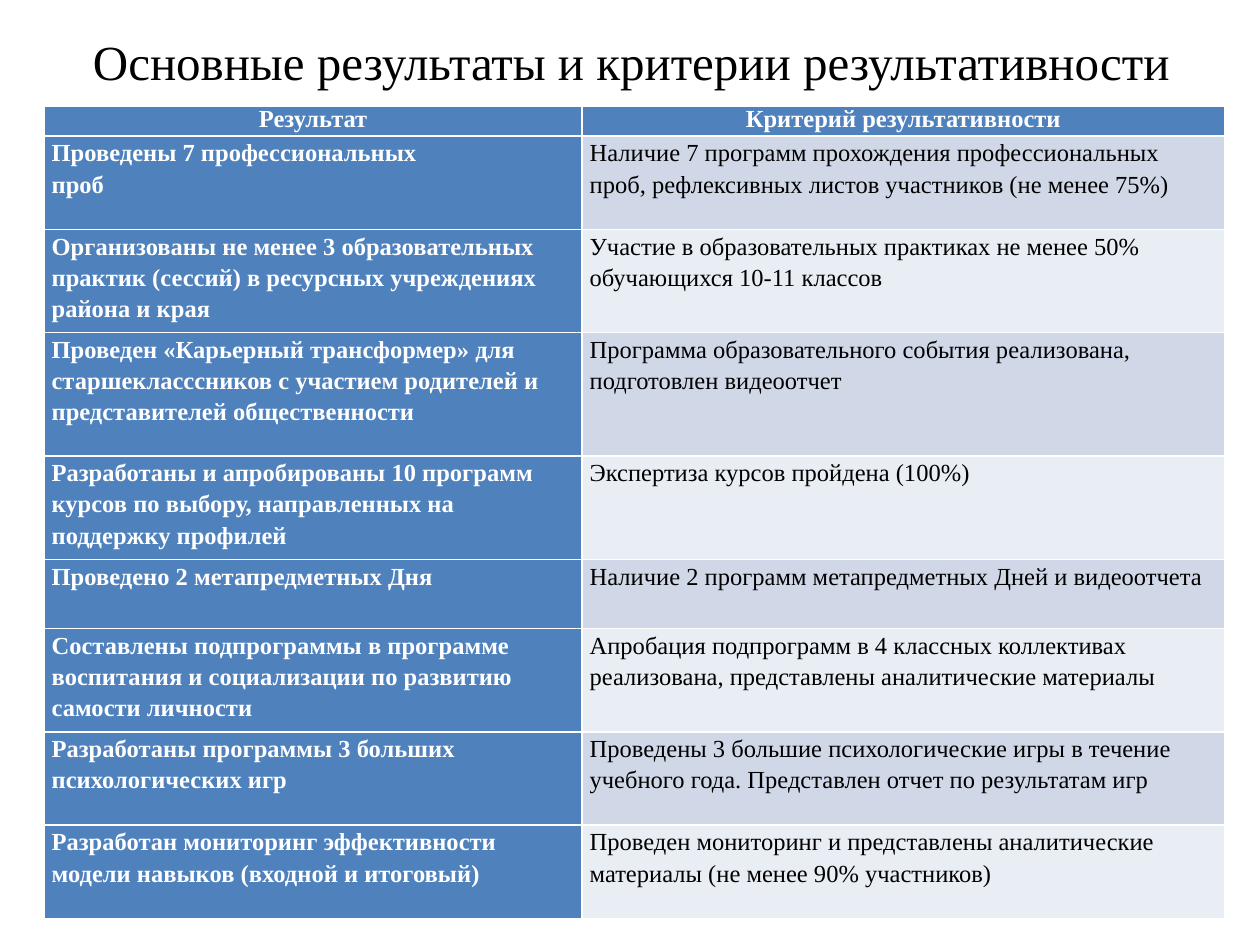
"""Build a slide with a table of project results and their success criteria."""
from dataclasses import dataclass

from pptx import Presentation
from pptx.dml.color import RGBColor
from pptx.enum.text import MSO_ANCHOR, MSO_AUTO_SIZE, PP_ALIGN
from pptx.util import Inches, Pt

CENTER, LEFT = PP_ALIGN.CENTER, PP_ALIGN.LEFT
MIDDLE, TOP = MSO_ANCHOR.MIDDLE, MSO_ANCHOR.TOP
NO_AUTOFIT = MSO_AUTO_SIZE.NONE


@dataclass(frozen=True)
class Theme:
    font: str = "Times New Roman"
    title_size: int = 28
    table_size: int = 14
    dark: RGBColor = RGBColor(0x00, 0x00, 0x00)
    light: RGBColor = RGBColor(0xFF, 0xFF, 0xFF)
    accent: RGBColor = RGBColor(0x4F, 0x81, 0xBD)
    bands: tuple = (RGBColor(0xD0, 0xD8, 0xE8), RGBColor(0xE9, 0xED, 0xF4))


@dataclass(frozen=True)
class CellStyle:
    fill: RGBColor
    color: RGBColor
    bold: bool
    align: PP_ALIGN = LEFT
    line_spacing: float = 1.15


@dataclass(frozen=True)
class Outcome:
    height: float
    result: str
    criterion: str


THEME = Theme()
HEADER_HEIGHT = 0.24
COLUMN_WIDTHS = (4.27, 5.1)
HEADINGS = ("Результат", "Критерий результативности")
OUTCOMES = (
    Outcome(0.74, "Проведены 7 профессиональных\nпроб",
            "Наличие 7 программ прохождения профессиональных проб, "
            "рефлексивных листов участников (не менее 75%)"),
    Outcome(0.82, "Организованы не менее 3 образовательных практик (сессий) "
                  "в ресурсных учреждениях района и края",
            "Участие в образовательных практиках не менее 50% "
            "обучающихся 10-11 классов"),
    Outcome(0.98, "Проведен «Карьерный трансформер» для старшекласссников "
                  "с участием родителей и представителей общественности",
            "Программа образовательного события реализована, "
            "подготовлен видеоотчет"),
    Outcome(0.82, "Разработаны и апробированы 10 программ курсов по выбору, "
                  "направленных на поддержку профилей",
            "Экспертиза курсов пройдена (100%)"),
    Outcome(0.55, "Проведено 2 метапредметных Дня",
            "Наличие 2 программ метапредметных Дней и видеоотчета"),
    Outcome(0.82, "Составлены подпрограммы в программе воспитания и "
                  "социализации по развитию самости личности",
            "Апробация подпрограмм в 4 классных коллективах реализована, "
            "представлены аналитические материалы"),
    Outcome(0.74, "Разработаны программы 3 больших психологических игр",
            "Проведены 3 большие психологические игры в течение учебного "
            "года. Представлен отчет по результатам игр"),
    Outcome(0.74, "Разработан мониторинг эффективности модели навыков "
                  "(входной и итоговый)",
            "Проведен мониторинг и представлены аналитические материалы "
            "(не менее 90% участников)"),
)


def add_run(paragraph, text: str, size: int, color: RGBColor, bold: bool) -> None:
    """Append one formatted run to a paragraph."""
    run = paragraph.add_run()
    run.text = text
    run.font.name = THEME.font
    run.font.size = Pt(size)
    run.font.bold = bold
    run.font.color.rgb = color


def fill_cell(cell, text: str, style: CellStyle) -> None:
    """Write one paragraph per line of text and colour the cell."""
    cell.fill.solid()
    cell.fill.fore_color.rgb = style.fill
    cell.margin_left = cell.margin_right = Inches(0.06)
    cell.margin_top = cell.margin_bottom = 0
    cell.vertical_anchor = TOP
    frame = cell.text_frame
    for index, line in enumerate(text.split("\n")):
        paragraph = frame.add_paragraph() if index else frame.paragraphs[0]
        paragraph.alignment = style.align
        paragraph.line_spacing = style.line_spacing
        add_run(paragraph, line, THEME.table_size, style.color, style.bold)


def add_title(slide, text: str) -> None:
    """Place and format the slide title."""
    title = slide.shapes.title
    title.left, title.top = Inches(0.51), Inches(0.21)
    title.width, title.height = Inches(9), Inches(0.54)
    frame = title.text_frame
    frame.auto_size = NO_AUTOFIT
    frame.vertical_anchor = MIDDLE
    frame.paragraphs[0].alignment = CENTER
    add_run(frame.paragraphs[0], text, THEME.title_size, THEME.dark, False)


def add_outcome_table(slide) -> None:
    """Draw the results beside their criteria."""
    heights = (HEADER_HEIGHT, *(outcome.height for outcome in OUTCOMES))
    table = slide.shapes.add_table(
        len(heights), len(COLUMN_WIDTHS), Inches(0.35), Inches(0.84),
        Inches(sum(COLUMN_WIDTHS)), Inches(sum(heights))).table
    table.first_col = True
    for column, width in zip(table.columns, COLUMN_WIDTHS):
        column.width = Inches(width)
    for row, height in zip(table.rows, heights):
        row.height = Inches(height)

    heading_style = CellStyle(THEME.accent, THEME.light, True, CENTER, 1.0)
    result_style = CellStyle(THEME.accent, THEME.light, True)
    for column, heading in enumerate(HEADINGS):
        fill_cell(table.cell(0, column), heading, heading_style)
    for index, outcome in enumerate(OUTCOMES):
        band = THEME.bands[index % len(THEME.bands)]
        fill_cell(table.cell(index + 1, 0), outcome.result, result_style)
        fill_cell(table.cell(index + 1, 1), outcome.criterion,
                  CellStyle(band, THEME.dark, False))


def main() -> None:
    """Create and save the presentation."""
    presentation = Presentation()
    presentation.slide_width, presentation.slide_height = Inches(10), Inches(7.5)
    slide = presentation.slides.add_slide(
        presentation.slide_layouts.get_by_name("Title Only"))
    add_title(slide, "Основные результаты и критерии результативности")
    add_outcome_table(slide)
    presentation.save("out.pptx")


if __name__ == "__main__":
    main()
